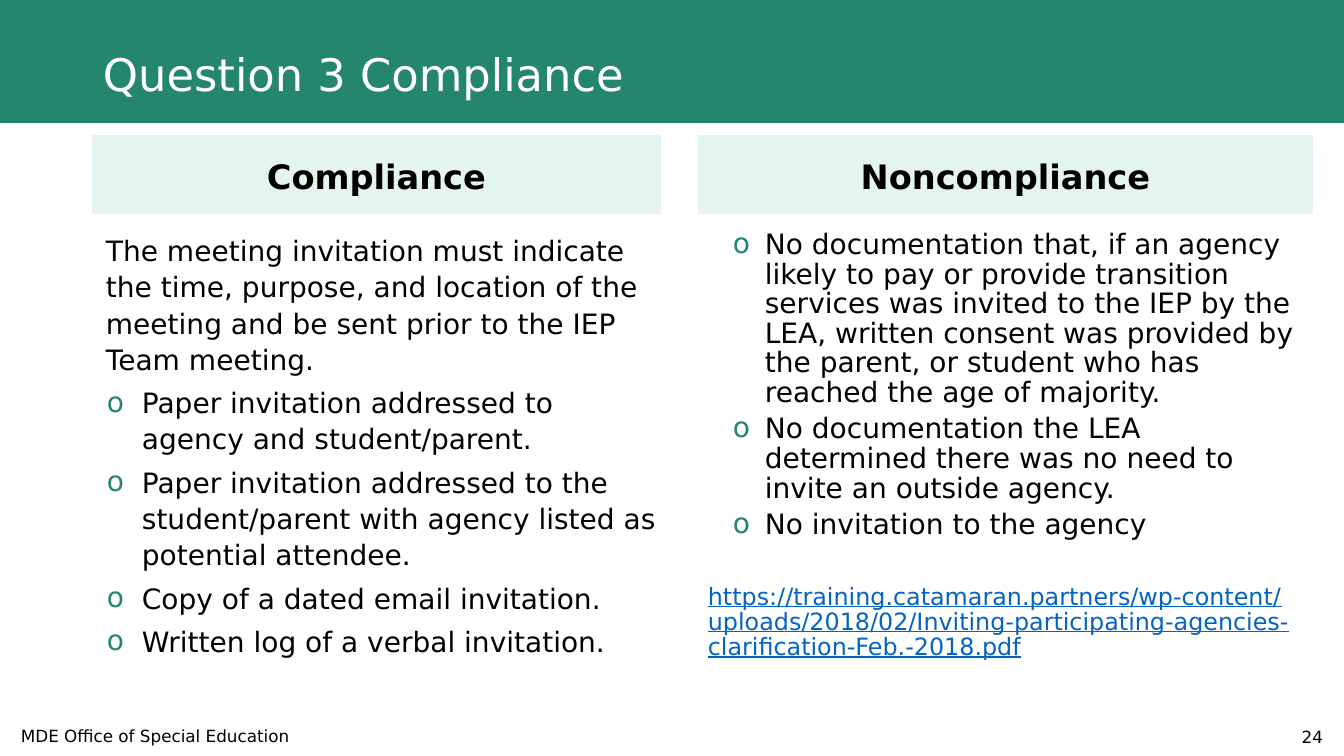
from pptx import Presentation
from pptx.dml.color import RGBColor
from pptx.enum.shapes import MSO_SHAPE
from pptx.enum.text import MSO_ANCHOR, PP_ALIGN
from pptx.oxml import parse_xml
from pptx.oxml.ns import nsdecls
from pptx.util import Emu, Pt

RECT = MSO_SHAPE.RECTANGLE
TOP, MIDDLE = MSO_ANCHOR.TOP, MSO_ANCHOR.MIDDLE
LEFT, CENTER, RIGHT = PP_ALIGN.LEFT, PP_ALIGN.CENTER, PP_ALIGN.RIGHT

FONT = "DejaVu Sans"
GREEN, MINT, BLACK, WHITE, BLUE = "25866E", "E4F4F0", "000000", "FFFFFF", "0563C1"

# Content
TITLE = "Question 3 Compliance"
INTRO = "The meeting invitation must indicate the time, purpose, and location of the meeting and be sent prior to the IEP Team meeting."
MET = [
    "Paper invitation addressed to agency and student/parent.",
    "Paper invitation addressed to the student/parent with agency listed as potential attendee.",
    "Copy of a dated email invitation.",
    "Written log of a verbal invitation.",
]
UNMET = [
    "No documentation that, if an agency likely to pay or provide transition services was invited to the IEP by the LEA, written consent was provided by the parent, or student who has reached the age of majority.",
    "No documentation the LEA determined there was no need to invite an outside agency.",
    "No invitation to the agency",
]
URL = "https://training.catamaran.partners/wp-content/uploads/2018/02/Inviting-participating-agencies-clarification-Feb.-2018.pdf"
OFFICE = "MDE Office of Special Education"
PAGE = "24"

# Header bands: text, left, width
HEADS = [("Compliance", 92, 569), ("Noncompliance", 698, 615)]
HEAD_TOP, HEAD_HIGH = 135, 79
BODY_TOP, BODY_WIDE = 226, 615


def px(n):
    return Emu(round(n * 914400 / 100.8))


def color(code):
    return RGBColor.from_string(code)


def band(x, y, w, h, fill):
    shape = slide.shapes.add_shape(RECT, px(x), px(y), px(w), px(h))
    shape.shadow.inherit = False
    shape.fill.solid()
    shape.fill.fore_color.rgb = color(fill)
    shape.line.fill.background()
    return shape


def box(x, y, w, h, anchor=MIDDLE):
    shape = slide.shapes.add_textbox(px(x), px(y), px(w), px(h))
    frame = shape.text_frame
    frame.word_wrap = True
    frame.vertical_anchor = anchor
    return frame


def write(frame, text, size, ink=BLACK, align=LEFT, pitch=1.0, gap=0,
          margin=0, hang=0, bold=False, under=False):
    first = not frame.text
    para = frame.paragraphs[0] if first else frame.add_paragraph()
    para.text = text
    para.alignment = align
    para.line_spacing = pitch
    para.space_before = Pt(0 if first else gap)
    props = para._p.get_or_add_pPr()
    props.set("marL", str(px(margin)))
    props.set("indent", str(-px(hang)))
    if hang:
        for part in (f'<a:buClr {nsdecls("a")}><a:srgbClr val="{GREEN}"/></a:buClr>',
                     f'<a:buFont {nsdecls("a")} typeface="{FONT}"/>',
                     f'<a:buChar {nsdecls("a")} char="o"/>'):
            props.append(parse_xml(part))
    font = para.font
    font.name, font.size, font.bold, font.underline = FONT, Pt(size), bold, under
    font.color.rgb = color(ink)


deck = Presentation()
deck.slide_width, deck.slide_height = px(1344), px(756)
slide = deck.slides.add_slide(deck.slide_layouts[6])

# Title
band(0, 0, 1344, 123, GREEN)
write(box(93, 31, 1159, 92), TITLE, 32, WHITE, pitch=0.9)

# Column headers
for name, x, w in HEADS:
    frame = band(x, HEAD_TOP, w, HEAD_HIGH, MINT).text_frame
    frame.vertical_anchor = MIDDLE
    write(frame, name, 24, align=CENTER, pitch=1.08, bold=True)

# Compliance column
frame = box(56, BODY_TOP, BODY_WIDE, 530, TOP)
write(frame, INTRO, 20, pitch=1.08, margin=40)
for item in MET:
    write(frame, item, 20, pitch=1.08, gap=5, margin=76, hang=35)

# Noncompliance column, closed by its web address
frame = box(698, BODY_TOP, BODY_WIDE, 490, TOP)
for item in UNMET:
    write(frame, item, 20, pitch=0.88, gap=5, margin=57, hang=32)
write(frame, URL, 17, BLUE, pitch=0.88, gap=32, under=True)

# Footer
write(box(11, 716, 454, 40), OFFICE, 12)
write(box(1031, 717, 302, 40), PAGE, 12, align=RIGHT)

deck.save("out.pptx")
